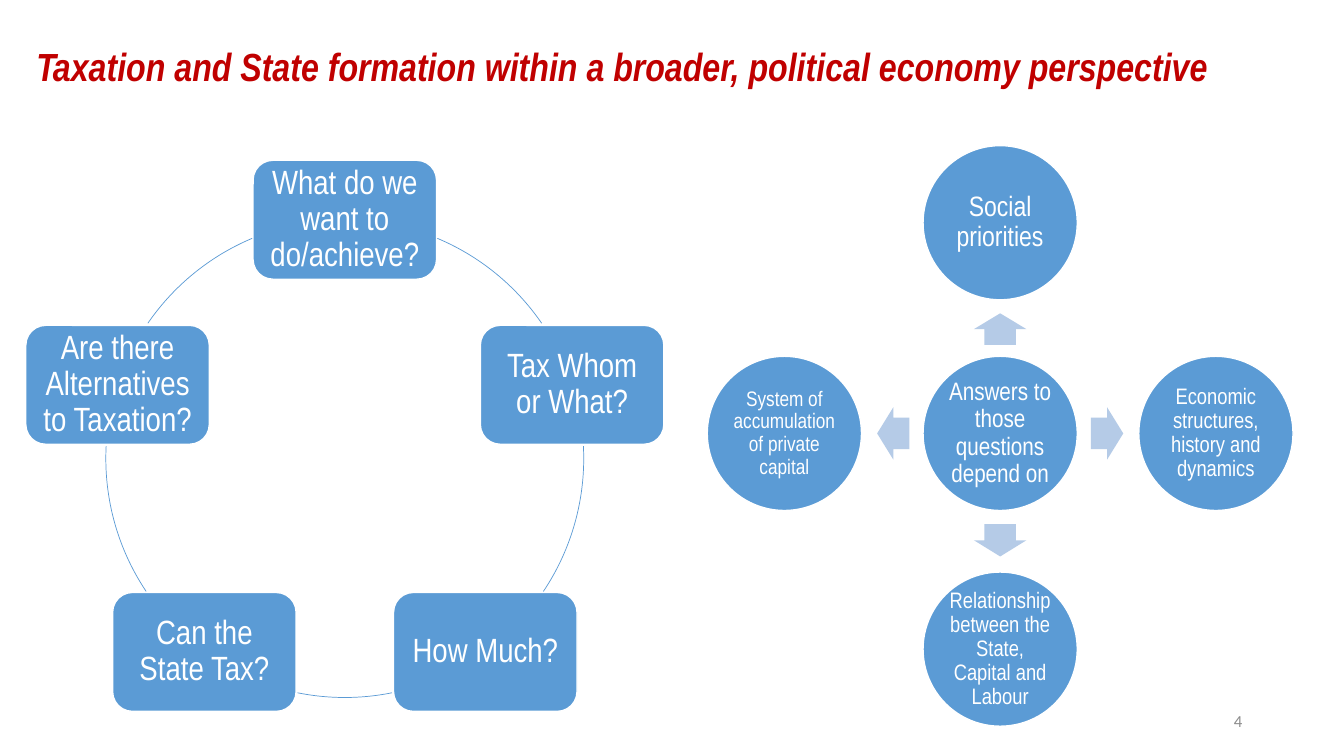
from math import cos, radians, sin

from pptx import Presentation
from pptx.dml.color import RGBColor
from pptx.enum.shapes import MSO_SHAPE as SHAPE
from pptx.enum.text import MSO_ANCHOR as ANCHOR, MSO_AUTO_SIZE as AUTO, PP_ALIGN as ALIGN
from pptx.util import Inches, Pt

BLUE, PALE, WHITE, RED, GREY = "5B9BD5", "B5CBE7", "FFFFFF", "C00000", "8C8C8C"

RING_CENTER, RING_RADIUS = (3.42, 4.55), 2.37
QUESTIONS = [
    "What do we want to do/achieve?",
    "Tax Whom or What?",
    "How Much?",
    "Can the State Tax?",
    "Are there Alternatives to Taxation?",
]
ARCS = [(292.8, 325.5), (357, 33.8), (78.6, 101.4), (146.2, 183), (214.5, 247.2)]

HUB_CENTER, CIRCLE_SIZE = (9.92, 4.3), (1.53, 1.53)
FACTORS = [
    (270, 2.09, "Social priorities", 20),
    (0, 2.14, "Economic structures, history and dynamics", 16),
    (90, 2.14, "Relationship between the State, Capital and Labour", 16),
    (180, 2.14, "System of accumulation of private capital", 15),
]


def color(value):
    return RGBColor.from_string(value)


def polar(center, radius, angle):
    a = radians(angle)
    return center[0] + radius * cos(a), center[1] + radius * sin(a)


def write(sp, text, size, hue, font="Arial Narrow", align=ALIGN.CENTER, spacing=0.9, inset=0.1):
    tf = sp.text_frame
    tf.word_wrap = True
    tf.auto_size = AUTO.NONE
    tf.vertical_anchor = ANCHOR.MIDDLE
    tf.margin_left = tf.margin_right = Inches(inset)
    tf.margin_top = tf.margin_bottom = Inches(min(inset, 0.1))
    p = tf.paragraphs[0]
    p.alignment = align
    p.line_spacing = spacing
    r = p.add_run()
    r.text = text
    r.font.size = Pt(size)
    r.font.name = font
    r.font.color.rgb = color(hue)
    return r


def add_centered(slide, kind, center, size, fill=None, line=None, weight=1):
    (x, y), (w, h) = center, size
    sp = slide.shapes.add_shape(
        kind, Inches(x - w / 2), Inches(y - h / 2), Inches(w), Inches(h))
    sp.shadow.inherit = False
    if fill:
        sp.fill.solid()
        sp.fill.fore_color.rgb = color(fill)
    else:
        sp.fill.background()
    if line:
        sp.line.color.rgb = color(line)
        sp.line.width = Pt(weight)
    else:
        sp.line.fill.background()
    return sp


def add_node(slide, kind, center, size, text, points, inset):
    sp = add_centered(slide, kind, center, size, BLUE, WHITE)
    write(sp, text, points, WHITE, inset=inset)


def add_arc(slide, start, end):
    diameter = 2 * RING_RADIUS
    sp = add_centered(slide, SHAPE.ARC, RING_CENTER, (diameter, diameter), None, BLUE, 0.5)
    sp.adjustments[0] = start * 0.6
    sp.adjustments[1] = end * 0.6


def add_arrow(slide, angle, reach):
    center = polar(HUB_CENTER, reach / 2 - 0.01, angle)
    sp = add_centered(slide, SHAPE.RIGHT_ARROW, center, (0.15 * reach, 0.52), PALE)
    sp.adjustments[0] = 0.6
    sp.adjustments[1] = 0.5
    sp.rotation = angle


def add_title(slide, text):
    sp = slide.shapes.title
    sp.left, sp.top, sp.width, sp.height = (Inches(v) for v in (0.26, 0.29, 12.84, 0.79))
    r = write(sp, text, 28, RED, align=ALIGN.LEFT)
    r.font.bold = r.font.italic = True


def add_question_ring(slide):
    for i, (question, (start, end)) in enumerate(zip(QUESTIONS, ARCS)):
        center = polar(RING_CENTER, RING_RADIUS, 72 * i - 90)
        add_node(slide, SHAPE.ROUNDED_RECTANGLE, center, (1.82, 1.18), question, 24, 0.1)
        add_arc(slide, start, end)


def add_factor_hub(slide):
    add_node(slide, SHAPE.OVAL, HUB_CENTER, CIRCLE_SIZE,
             "Answers to those questions depend on", 18, 0.03)
    for angle, reach, factor, points in FACTORS:
        add_arrow(slide, angle, reach)
        center = polar(HUB_CENTER, reach, angle)
        add_node(slide, SHAPE.OVAL, center, CIRCLE_SIZE, factor, points, 0.02)


def add_page_number(slide, number):
    sp = slide.shapes.add_textbox(Inches(9.42), Inches(6.95), Inches(3), Inches(0.4))
    write(sp, number, 12, GREY, "Calibri", ALIGN.RIGHT, 1.0)


def main():
    prs = Presentation()
    prs.slide_width, prs.slide_height = Inches(13.33), Inches(7.5)
    slide = prs.slides.add_slide(prs.slide_layouts[5])
    add_title(slide, "Taxation and State formation within a broader, political economy perspective")
    add_question_ring(slide)
    add_factor_hub(slide)
    add_page_number(slide, "4")
    prs.save("out.pptx")


if __name__ == "__main__":
    main()
